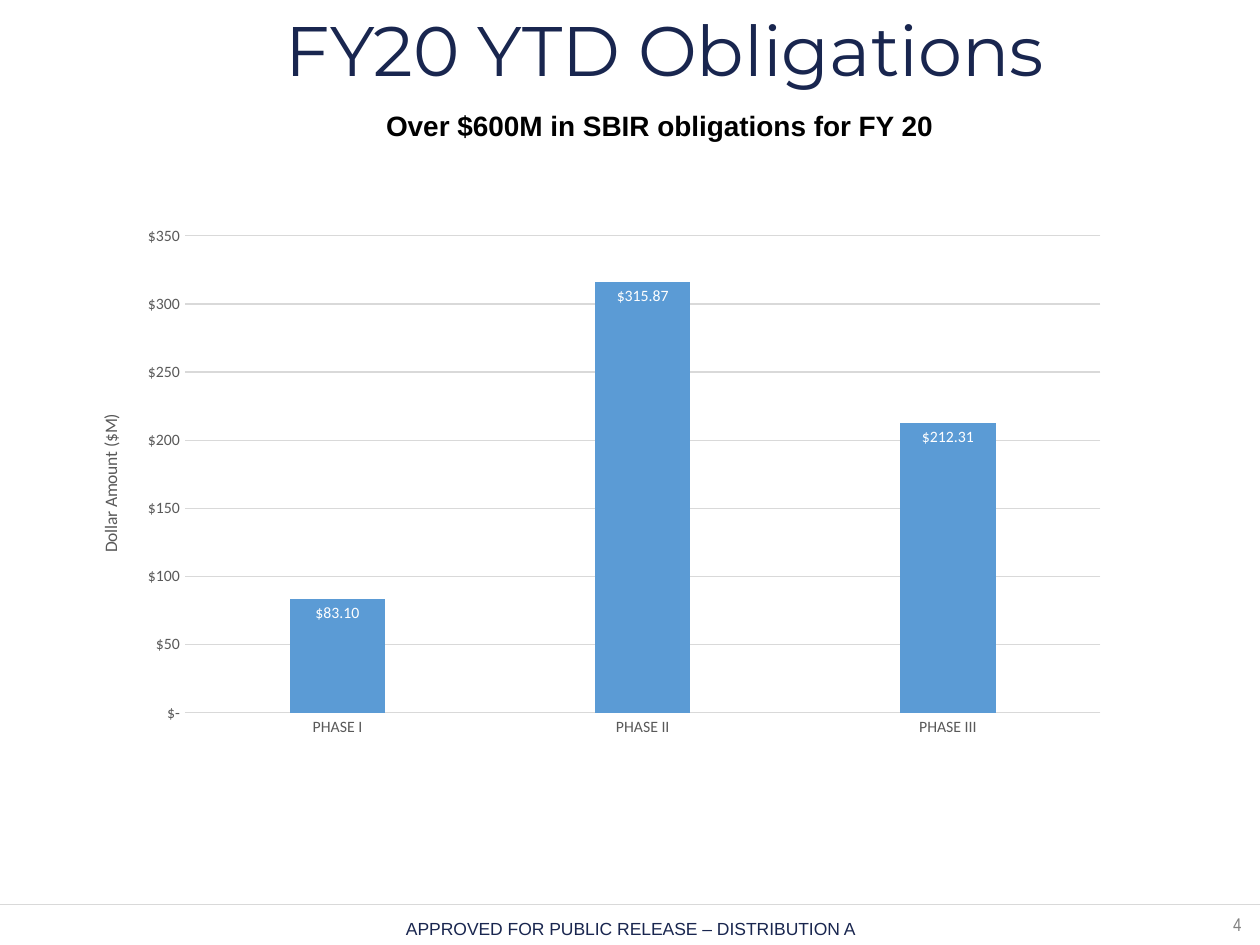
from pptx import Presentation
from pptx.chart.data import CategoryChartData
from pptx.dml.color import RGBColor
from pptx.enum.chart import XL_CHART_TYPE, XL_LABEL_POSITION, XL_TICK_MARK
from pptx.enum.shapes import MSO_CONNECTOR
from pptx.enum.text import MSO_ANCHOR, PP_ALIGN
from pptx.oxml.ns import qn
from pptx.util import Cm, Pt
from lxml import etree

COLUMN = XL_CHART_TYPE.COLUMN_CLUSTERED
INSIDE_END = XL_LABEL_POSITION.INSIDE_END
NO_TICK = XL_TICK_MARK.NONE
TOP, MIDDLE = MSO_ANCHOR.TOP, MSO_ANCHOR.MIDDLE

COLORS = {"navy": "19264F", "black": "000000", "gray": "808080", "label": "595959",
          "rule": "D9D9D9", "bar": "5B9BD5", "white": "FFFFFF"}

# Content: text, box (left, top, width, height in cm), font, size, color, bold, anchor, spacing, wrap
TEXTS = [
    ("4", (24.49, 18.29, 0.91, 0.74), "Arial Narrow", 10.5, "gray", False, TOP, 1, False),
    ("APPROVED FOR PUBLIC RELEASE – DISTRIBUTION A", (5.31, 18.39, 14.81, 0.69),
     "Arial", 10, "navy", False, TOP, 1, True),
    ("FY20 YTD Obligations", (2.24, 0.18, 22.33, 1.8),
     "Montserrat", 40, "navy", False, MIDDLE, 0.9, True),
    ("Over $600M in SBIR obligations for FY 20", (5.26, 2.06, 16.08, 0.94),
     "Arial", 16, "black", True, TOP, 1, True),
]
OBLIGATIONS = {"PHASE I": 83.10, "PHASE II": 315.87, "PHASE III": 212.31}
AXIS_TITLE = "Dollar Amount ($M)"
CHART_BOX = (1.3, 4.37, 21.29, 10.72)


def rgb(name):
    return RGBColor.from_string(COLORS[name])


def set_font(font, name, size, color, bold=False):
    font.name, font.size, font.bold = name, Pt(size), bold
    font.color.rgb = rgb(color)


def set_line(line, color, width):
    line.color.rgb = rgb(color)
    line.width = Pt(width)


def add_text(s, text, box, font, size, color, bold, anchor, spacing, wrap):
    tf = s.shapes.add_textbox(*map(Cm, box)).text_frame
    tf.word_wrap, tf.vertical_anchor = wrap, anchor
    p = tf.paragraphs[0]
    p.text, p.alignment, p.line_spacing = text, PP_ALIGN.CENTER, spacing
    set_font(p.font, font, size, color, bold)


def place(parent, index, **settings):
    """Give a chart part a fixed layout, in fractions of the chart."""
    layout = parent.find(qn("c:layout"))
    if layout is None:
        layout = etree.Element(qn("c:layout"))
        parent.insert(index, layout)
    manual = etree.SubElement(layout, qn("c:manualLayout"))
    for tag, value in settings.items():
        etree.SubElement(manual, qn("c:" + tag)).set("val", str(value))


prs = Presentation()
prs.slide_width, prs.slide_height = Cm(25.4), Cm(19.05)
s = prs.slides.add_slide(prs.slide_layouts[6])

# Footer rule
rule = s.shapes.add_connector(MSO_CONNECTOR.STRAIGHT, 0, Cm(18.24), prs.slide_width, Cm(18.24))
set_line(rule.line, "rule", 0.5)
etree.SubElement(rule._element.spPr, qn("a:effectLst"))

# Text
for item in TEXTS:
    add_text(s, *item)

# Chart
data = CategoryChartData()
data.categories = list(OBLIGATIONS)
data.add_series("Series 1", OBLIGATIONS.values())
chart = s.shapes.add_chart(COLUMN, *map(Cm, CHART_BOX), data).chart
chart.has_legend = chart.has_title = False
set_font(chart.font, "Calibri", 10, "black")
place(chart._chartSpace.chart.plotArea, 0, layoutTarget="inner", xMode="edge", yMode="edge",
      x=0.114, y=0.036, w=0.867, h=0.897)

# Bars and their labels
plot = chart.plots[0]
plot.gap_width, plot.overlap, plot.vary_by_categories = 219, -27, False
fill = plot.series[0].format.fill
fill.solid()
fill.fore_color.rgb = rgb("bar")
plot.has_data_labels = True
labels = plot.data_labels
labels.show_value, labels.position = True, INSIDE_END
labels.number_format, labels.number_format_is_linked = '"$"#,##0.00', False
set_font(labels.font, "Calibri", 9, "white")

# Axes
cat_axis, val_axis = chart.category_axis, chart.value_axis
for axis in (cat_axis, val_axis):
    axis.major_tick_mark = axis.minor_tick_mark = NO_TICK
    set_font(axis.tick_labels.font, "Calibri", 9, "label")
set_line(cat_axis.format.line, "rule", 0.75)
val_axis.format.line.fill.background()
set_line(val_axis.major_gridlines.format.line, "rule", 0.75)
val_axis.minimum_scale, val_axis.maximum_scale, val_axis.major_unit = 0, 350, 50
val_axis.tick_labels.number_format = '"$"#,##0;-"$"#,##0;"$-"'
val_axis.tick_labels.number_format_is_linked = False

# Value axis title
title = val_axis.axis_title
p = title.text_frame.paragraphs[0]
p.text = AXIS_TITLE
set_font(p.font, "Calibri", 10, "label")
place(title._element, 1, xMode="edge", yMode="edge", x=0.03, y=0.365)

prs.save("out.pptx")
